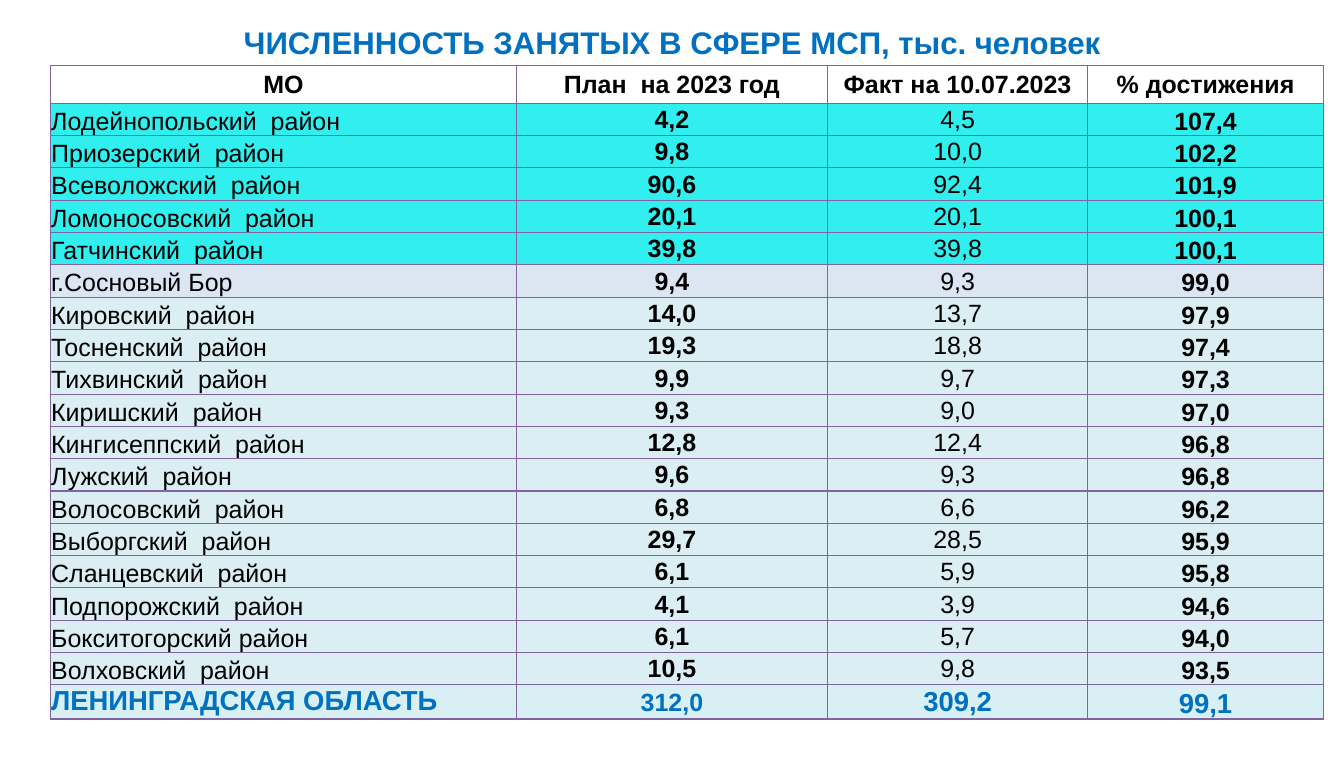
from dataclasses import dataclass

import pptx
import pptx.dml.color
import pptx.enum.text
import pptx.oxml
import pptx.oxml.ns
import pptx.util
from pptx.enum.text import MSO_ANCHOR, PP_ALIGN

PX = 9144  # EMU per px, 100 px to the inch
FONT = "Arial"
COLORS = {
    "text": "000000",
    "accent": "0070C0",
    "border": "8064A2",
    "achieved": "31EFEF",
    "near": "DCE6F2",
    "below": "DBEEF4",
    "total": "D8EFF4",
}


@dataclass(frozen=True)
class CellStyle:
    anchor: MSO_ANCHOR
    align: PP_ALIGN = PP_ALIGN.CENTER
    bold: bool = True
    size: int = 20
    color: str = "text"


@dataclass(frozen=True)
class Band:
    fill: str | None
    height: int
    styles: tuple[CellStyle, ...]
    rows: tuple[tuple[str, ...], ...]


# Cell styles, one per column
MIDDLE = CellStyle(MSO_ANCHOR.MIDDLE)
HEADER_STYLES = (MIDDLE,) * 4
DISTRICT_STYLES = (
    CellStyle(MSO_ANCHOR.BOTTOM, PP_ALIGN.LEFT, bold=False),
    MIDDLE,
    CellStyle(MSO_ANCHOR.MIDDLE, bold=False),
    CellStyle(MSO_ANCHOR.BOTTOM),
)
TOTAL_STYLES = (
    CellStyle(MSO_ANCHOR.TOP, PP_ALIGN.LEFT, size=22, color="accent"),
    CellStyle(MSO_ANCHOR.MIDDLE, color="accent"),
    CellStyle(MSO_ANCHOR.MIDDLE, size=22, color="accent"),
    CellStyle(MSO_ANCHOR.BOTTOM, size=22, color="accent"),
)

# Table content
TITLE = "ЧИСЛЕННОСТЬ ЗАНЯТЫХ В СФЕРЕ МСП, тыс. человек"
COLUMN_WIDTHS = (519, 346, 290, 262)
BANDS = (
    Band(None, 42, HEADER_STYLES, (
        ("МО", "План  на 2023 год", "Факт на 10.07.2023", "% достижения"),
    )),
    Band("achieved", 36, DISTRICT_STYLES, (
        ("Лодейнопольский  район", "4,2", "4,5", "107,4"),
        ("Приозерский  район", "9,8", "10,0", "102,2"),
        ("Всеволожский  район", "90,6", "92,4", "101,9"),
        ("Ломоносовский  район", "20,1", "20,1", "100,1"),
        ("Гатчинский  район", "39,8", "39,8", "100,1"),
    )),
    Band("near", 36, DISTRICT_STYLES, (
        ("г.Сосновый Бор", "9,4", "9,3", "99,0"),
    )),
    Band("below", 36, DISTRICT_STYLES, (
        ("Кировский  район", "14,0", "13,7", "97,9"),
        ("Тосненский  район", "19,3", "18,8", "97,4"),
        ("Тихвинский  район", "9,9", "9,7", "97,3"),
        ("Киришский  район", "9,3", "9,0", "97,0"),
        ("Кингисеппский  район", "12,8", "12,4", "96,8"),
        ("Лужский  район", "9,6", "9,3", "96,8"),
        ("Волосовский  район", "6,8", "6,6", "96,2"),
        ("Выборгский  район", "29,7", "28,5", "95,9"),
        ("Сланцевский  район", "6,1", "5,9", "95,8"),
        ("Подпорожский  район", "4,1", "3,9", "94,6"),
        ("Бокситогорский район", "6,1", "5,7", "94,0"),
        ("Волховский  район", "10,5", "9,8", "93,5"),
    )),
    Band("total", 38, TOTAL_STYLES, (
        ("ЛЕНИНГРАДСКАЯ ОБЛАСТЬ", "312,0", "309,2", "99,1"),
    )),
)


def px(length: int) -> pptx.util.Emu:
    return pptx.util.Emu(length * PX)


def rgb(name: str) -> pptx.dml.color.RGBColor:
    return pptx.dml.color.RGBColor.from_string(COLORS[name])


def set_font(paragraph, size: int, bold: bool, color: str) -> None:
    font = paragraph.font
    font.name = FONT
    font.size = pptx.util.Pt(size)
    font.bold = bold
    font.color.rgb = rgb(color)


def add_borders(cell) -> None:
    properties = cell._tc.get_or_add_tcPr()
    for side in ("lnL", "lnR", "lnT", "lnB"):
        properties.append(pptx.oxml.parse_xml(
            f'<a:{side} {pptx.oxml.ns.nsdecls("a")} w="{pptx.util.Pt(1)}">'
            f'<a:solidFill><a:srgbClr val="{COLORS["border"]}"/></a:solidFill>'
            f'</a:{side}>'
        ))


def fill_cell(cell, text: str, style: CellStyle, fill: str | None) -> None:
    cell.margin_left = cell.margin_right = cell.margin_top = px(1)
    cell.margin_bottom = 0
    cell.vertical_anchor = style.anchor
    add_borders(cell)
    if fill is None:
        cell.fill.background()
    else:
        cell.fill.solid()
        cell.fill.fore_color.rgb = rgb(fill)
    paragraph = cell.text_frame.paragraphs[0]
    paragraph.text = text
    paragraph.alignment = style.align
    set_font(paragraph, style.size, style.bold, style.color)


def add_title(slide) -> None:
    shape = slide.shapes.add_textbox(px(257), px(25), px(982), px(48))
    shape.text_frame.word_wrap = False
    paragraph = shape.text_frame.paragraphs[0]
    paragraph.text = TITLE
    paragraph.alignment = PP_ALIGN.CENTER
    paragraph.line_spacing = 0.93
    set_font(paragraph, 25, True, "accent")


def add_employment_table(slide) -> None:
    rows = [(band, values) for band in BANDS for values in band.rows]
    height = sum(band.height for band, _ in rows)
    table = slide.shapes.add_table(
        len(rows), len(COLUMN_WIDTHS),
        px(56), px(73), px(sum(COLUMN_WIDTHS)), px(height),
    ).table
    table.first_row = False
    table.horz_banding = False
    for column, width in zip(table.columns, COLUMN_WIDTHS):
        column.width = px(width)
    for row, (band, values) in zip(table.rows, rows):
        row.height = px(band.height)
        for cell, text, style in zip(row.cells, values, band.styles):
            fill_cell(cell, text, style, band.fill)


def main() -> None:
    presentation = pptx.Presentation()
    presentation.slide_width = px(1496)
    presentation.slide_height = px(843)
    slide = presentation.slides.add_slide(presentation.slide_layouts[6])
    add_title(slide)
    add_employment_table(slide)
    presentation.save("out.pptx")


if __name__ == "__main__":
    main()
